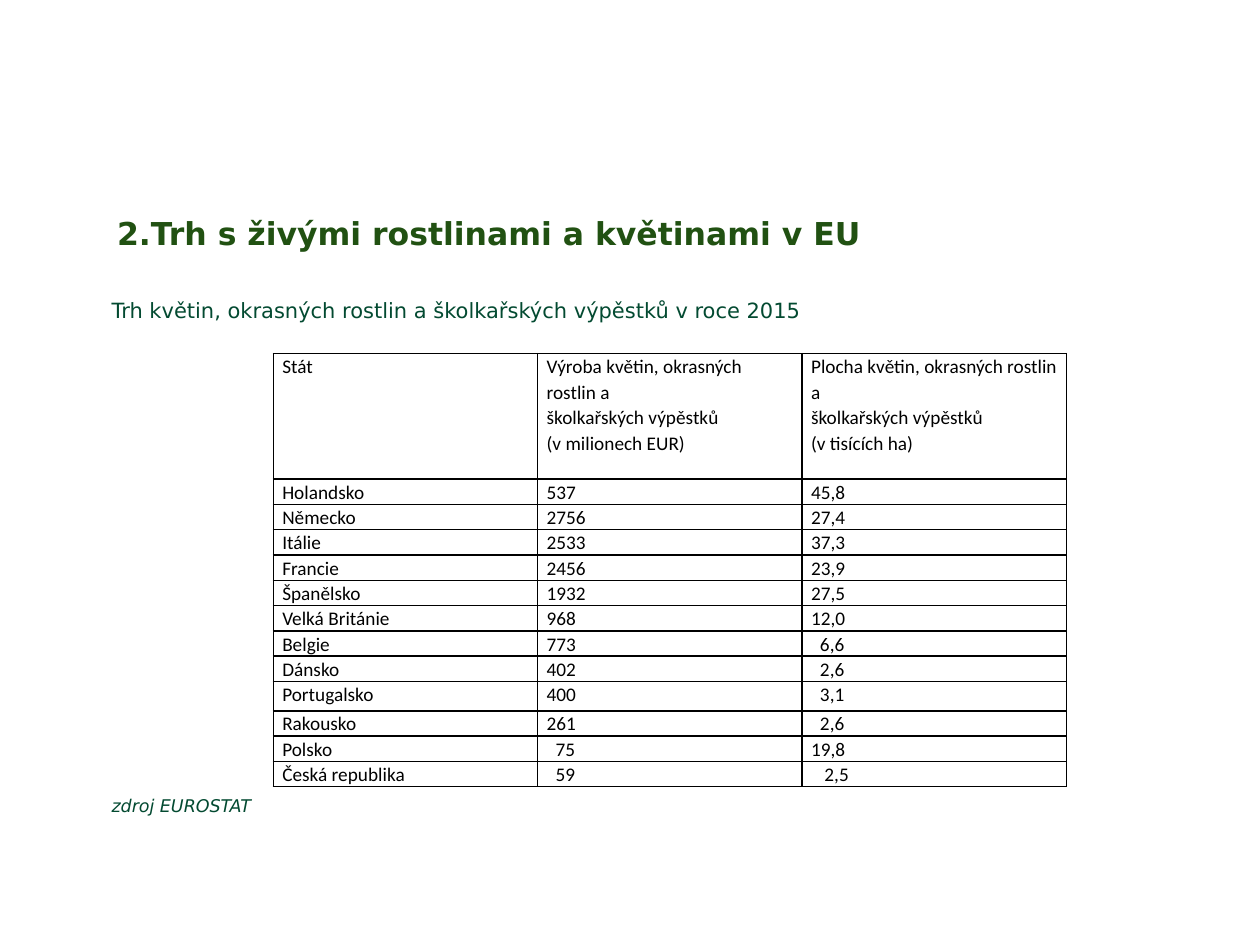
from lxml import etree
from pptx import Presentation
from pptx.dml.color import RGBColor
from pptx.enum.text import MSO_ANCHOR as Anchor, PP_ALIGN as Align
from pptx.oxml import parse_xml
from pptx.oxml.ns import nsdecls
from pptx.util import Cm, Pt

COLORS = {"title": "215112", "text": "034A31", "table": "000000"}


def set_font(paragraph, name, size, color, bold=False, italic=False):
    font = paragraph.font
    font.name, font.size = name, Pt(size)
    font.bold, font.italic = bold, italic
    font.color.rgb = RGBColor.from_string(COLORS[color])


def add_line(left, top, width, height, text):
    frame = slide.shapes.add_textbox(Cm(left), Cm(top), Cm(width), Cm(height)).text_frame
    frame.text = text
    return frame


prs = Presentation()
prs.slide_width, prs.slide_height = Cm(25.4), Cm(19.05)
slide = prs.slides.add_slide(prs.slide_layouts[6])

# Title
title = add_line(2, 4.06, 15.88, 1.24, "2.Trh s živými rostlinami a květinami v EU")
title.word_wrap = False
title.vertical_anchor = Anchor.BOTTOM
title.margin_left = title.margin_right = Cm(0.36)
title.margin_top = title.margin_bottom = Cm(0.23)
set_font(title.paragraphs[0], "DejaVu Sans", 18, "title", bold=True)

# Subtitle
subtitle = add_line(2, 5.84, 22, 0.8,
                    "Trh květin, okrasných rostlin a školkařských výpěstků v roce 2015")
subtitle.word_wrap = True
subtitle.paragraphs[0].line_spacing = 1.07
set_font(subtitle.paragraphs[0], "DejaVu Sans", 12, "text")

# Market table
market = [
    ("Stát",
     "Výroba květin, okrasných rostlin a\nškolkařských výpěstků\n(v milionech EUR)",
     "Plocha květin, okrasných rostlin a\nškolkařských výpěstků\n(v tisících ha)"),
    ("Holandsko", "537", "45,8"),
    ("Německo", "2756", "27,4"),
    ("Itálie", "2533", "37,3"),
    ("Francie", "2456", "23,9"),
    ("Španělsko", "1932", "27,5"),
    ("Velká Británie", "968", "12,0"),
    ("Belgie", "773", "6,6"),
    ("Dánsko", "402", "2,6"),
    ("Portugalsko", "400", "3,1"),
    ("Rakousko", "261", "2,6"),
    ("Polsko", "75", "19,8"),
    ("Česká republika", "59", "2,5"),
]
row_heights = [2.53] + [0.51] * 8 + [0.59] + [0.51] * 3
indents = {(r, 2): 0.18 for r in (7, 8, 9, 10)}
indents.update({(11, 1): 0.18, (12, 1): 0.18, (12, 2): 0.27})

table = slide.shapes.add_table(len(market), 3, Cm(5.51), Cm(7.13),
                               Cm(15.99), Cm(sum(row_heights))).table
table.first_row = table.horz_banding = False
for column in table.columns:
    column.width = Cm(5.33)
for r, (values, height) in enumerate(zip(market, row_heights)):
    table.rows[r].height = Cm(height)
    for c, value in enumerate(values):
        cell = table.cell(r, c)
        cell.text = value
        cell.margin_left = Cm(0.18 + indents.get((r, c), 0))
        cell.margin_right = Cm(0.18)
        cell.margin_top = cell.margin_bottom = 0
        for paragraph in cell.text_frame.paragraphs:
            paragraph.alignment = Align.LEFT
            paragraph.line_spacing = 1.07
            set_font(paragraph, "Calibri", 11, "table")
        # Borders come before the fill in the cell properties
        for side in ("lnL", "lnR", "lnT", "lnB"):
            border = parse_xml(f'<a:{side} {nsdecls("a")} w="{Pt(1)}"/>')
            fill = etree.SubElement(border, border.tag.replace(side, "solidFill"))
            etree.SubElement(fill, border.tag.replace(side, "srgbClr"), val=COLORS["table"])
            cell._tc.get_or_add_tcPr().append(border)
        cell.fill.background()

# Source note
source = add_line(2, 15.9, 6, 0.7, "zdroj EUROSTAT")
source.word_wrap = True
set_font(source.paragraphs[0], "DejaVu Sans", 10, "text", italic=True)

prs.save("out.pptx")
